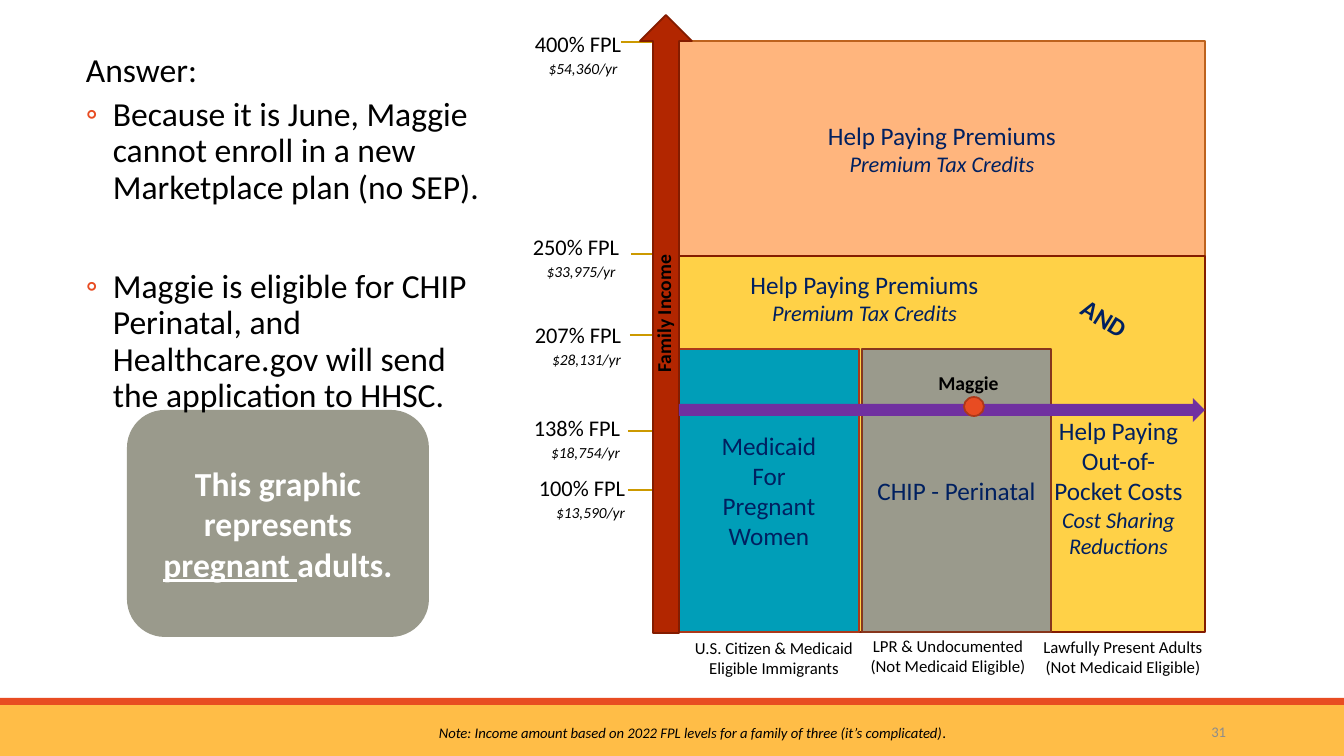
from lxml.etree import SubElement
from pptx import Presentation
from pptx.dml.color import RGBColor
from pptx.enum.shapes import MSO_CONNECTOR as Connector, MSO_SHAPE as Shape
from pptx.enum.text import MSO_ANCHOR as Anchor, PP_ALIGN as Align
from pptx.oxml.ns import qn
from pptx.util import Pt

EMU_PER_PX = 914400 / 100.8
FONT = "Calibri"
COLORS = {
    "black": "000000", "white": "FFFFFF", "navy": "002060", "muted": "8C8C8C",
    "amber": "FFBD47", "orange": "E84C22", "tick": "CC9900",
    "peach": "FFB57D", "peach_edge": "BD621D", "yellow": "FFD147",
    "brick": "B22600", "brick_edge": "841C00", "teal": "009EB8",
    "rust": "AC3819", "gray": "9A9A8C", "gray_edge": "87361C", "purple": "7030A0",
}

SMALL_ITALIC = {"size": 16, "italic": True}
PREMIUMS = ["Help Paying Premiums", [("Premium Tax Credits", SMALL_ITALIC)]]
COST_SHARING = ["Help Paying", "Out-of-Pocket Costs",
                [("Cost Sharing Reductions", SMALL_ITALIC)]]
GRAPHIC_NOTE = [[("This graphic represents ", {}),
                 ("pregnant ", {"underline": True}), ("adults.", {})]]
FOOTNOTE = [[("Note: Income amount based on 2022 FPL levels for a family of three "
              "(it’s complicated)", {}), (".", {"size": 11})]]
ANSWER = [
    ("Answer:", False, 4),
    ("Because it is June, Maggie cannot enroll in a new Marketplace plan (no SEP).", True, 43),
    ("Maggie is eligible for CHIP Perinatal, and Healthcare.gov will send "
     "the application to HHSC.", True, 4),
]
INCOME_LEVELS = [
    ("400% FPL", "$54,360/yr ", 31, 631, 621, 42),
    ("250% FPL", "$33,975/yr ", 234, 629, 631, 254),
    ("207% FPL", "$28,131/yr", 322, 631, 630, 335),
    ("138% FPL", "$18,754/yr", 415, 630, 628, 431),
    ("100% FPL", "$13,590/yr", 475, 635, 628, 490),
]
GROUPS = [
    (["U.S. Citizen & Medicaid Eligible Immigrants"], 675, 633, 198),
    (["LPR & Undocumented", "(Not Medicaid Eligible)"], 850, 631, 196),
    (["Lawfully Present Adults (Not Medicaid Eligible)"], 1025, 632, 196),
]

SLIDE_W, SLIDE_H = 1344, 756
CHART_LEFT, CHART_W = 679, 526
CHART_TOP, CHART_BOTTOM = 41, 632
REDUCTION_TOP, MEDICAID_TOP = 256, 349
LABEL_W, TICK_W = 140, 60


def px(length):
    return round(length * EMU_PER_PX)


def rgb(name):
    return RGBColor.from_string(COLORS[name])


def write(shape, paragraphs, size=18, color="navy", bold=False, italic=False,
          align=Align.CENTER, anchor=Anchor.TOP, spacing=None, wrap=True):
    frame = shape.text_frame
    frame.word_wrap = wrap
    frame.vertical_anchor = anchor
    for index, content in enumerate(paragraphs):
        paragraph = frame.paragraphs[0] if index == 0 else frame.add_paragraph()
        paragraph.alignment = align
        if spacing:
            paragraph.line_spacing = spacing
        for words, change in [(content, {})] if isinstance(content, str) else content:
            run = paragraph.add_run()
            run.text = words
            font = run.font
            font.name = FONT
            font.size = Pt(change.get("size", size))
            font.bold = bold
            font.italic = change.get("italic", italic)
            font.underline = change.get("underline", False)
            font.color.rgb = rgb(color)
    return frame


def add_block(slide, kind, box, fill, edge=None):
    block = slide.shapes.add_shape(kind, *map(px, box))
    block.shadow.inherit = False
    block.fill.solid()
    block.fill.fore_color.rgb = rgb(fill)
    if edge:
        block.line.color.rgb = rgb(edge)
        block.line.width = Pt(1.25)
    else:
        block.line.fill.background()
    return block


def add_label(slide, box, paragraphs, rotation=0, **style):
    label = slide.shapes.add_textbox(*map(px, box))
    label.rotation = rotation
    return write(label, paragraphs, **style)


def add_tick(slide, left, y):
    tick = slide.shapes.add_connector(
        Connector.STRAIGHT, px(left), px(y), px(left + TICK_W), px(y))
    tick.line.color.rgb = rgb("tick")
    tick.line.width = Pt(1.25)
    SubElement(tick._element.spPr, qn("a:effectLst"))


def add_bullet(paragraph):
    properties = paragraph._p.get_or_add_pPr()
    properties.set("marL", str(px(32)))
    properties.set("indent", str(px(-27)))
    color = SubElement(properties, qn("a:buClr"))
    SubElement(color, qn("a:srgbClr"), val=COLORS["orange"])
    SubElement(properties, qn("a:buFont"), typeface=FONT)
    SubElement(properties, qn("a:buChar"), char="◦")


def add_answer(slide):
    frame = add_label(slide, (71, 48, 419, 340), [line[0] for line in ANSWER],
                      size=24, color="black", align=Align.LEFT, spacing=0.9)
    for index, (paragraph, (_, bulleted, after)) in enumerate(zip(frame.paragraphs, ANSWER)):
        if index:
            paragraph.space_before = Pt(2)
        paragraph.space_after = Pt(after)
        if bulleted:
            add_bullet(paragraph)
        else:
            paragraph._p.get_or_add_pPr().set("marL", str(px(5)))


def add_income_chart(slide):
    for level, amount, top, right, tick_left, tick_y in INCOME_LEVELS:
        add_tick(slide, tick_left, tick_y)
        add_label(slide, (right - LABEL_W, top, LABEL_W, 53),
                  [level, [(amount, {"size": 11, "italic": True})]],
                  size=16, color="black", align=Align.RIGHT, spacing=Pt(15))

    premiums = add_block(slide, Shape.RECTANGLE,
                         (CHART_LEFT, CHART_TOP, CHART_W, REDUCTION_TOP - CHART_TOP),
                         "peach", "peach_edge")
    write(premiums, PREMIUMS, anchor=Anchor.MIDDLE)
    add_block(slide, Shape.RECTANGLE,
              (CHART_LEFT, REDUCTION_TOP, CHART_W, CHART_BOTTOM - REDUCTION_TOP),
              "yellow", "brick_edge")
    medicaid_h = CHART_BOTTOM - MEDICAID_TOP
    medicaid = add_block(slide, Shape.RECTANGLE,
                         (CHART_LEFT, MEDICAID_TOP, 180, medicaid_h), "teal", "rust")
    write(medicaid, ["Medicaid", "For", "Pregnant", "Women"], anchor=Anchor.MIDDLE)
    perinatal = add_block(slide, Shape.RECTANGLE,
                          (862, MEDICAID_TOP, 189, medicaid_h), "gray", "gray_edge")
    write(perinatal, ["CHIP - Perinatal"], anchor=Anchor.MIDDLE)

    add_label(slide, (697, 264, 335, 68), PREMIUMS)
    add_label(slide, (1070, 298, 69, 40), ["AND"], rotation=31.9, bold=True, wrap=False)
    add_label(slide, (1042, 410, 153, 156), COST_SHARING)

    add_block(slide, Shape.UP_ARROW, (640, 15, 52, 618), "brick", "brick_edge")
    add_label(slide, (589, 287, 153, 38), ["Family Income"], rotation=270,
              size=14, color="black", bold=True, align=Align.LEFT)
    for group, left, top, width in GROUPS:
        add_label(slide, (left, top, width, 50), group, size=12, color="black")

    add_block(slide, Shape.RIGHT_ARROW, (CHART_LEFT, 398, CHART_W, 24), "purple")
    add_block(slide, Shape.OVAL, (964, 397, 20, 19), "orange", "rust")
    add_label(slide, (927, 366, 83, 34), ["Maggie"], size=14, color="black", bold=True)


def main():
    deck = Presentation()
    deck.slide_width, deck.slide_height = px(SLIDE_W), px(SLIDE_H)
    slide = deck.slides.add_slide(deck.slide_layouts[6])

    add_block(slide, Shape.RECTANGLE, (0, 705, SLIDE_W, 51), "amber")
    add_block(slide, Shape.RECTANGLE, (0, 698, SLIDE_W, 7), "orange")
    add_label(slide, (1092, 712, 144, 40), ["31"], size=10.5, color="muted",
              align=Align.RIGHT, anchor=Anchor.MIDDLE)
    add_income_chart(slide)
    note = add_block(slide, Shape.ROUNDED_RECTANGLE, (127, 410, 302, 227), "gray")
    write(note, GRAPHIC_NOTE, size=24, color="white", bold=True, anchor=Anchor.MIDDLE)
    add_answer(slide)
    add_label(slide, (429, 718, 539, 29), FOOTNOTE, size=10.5, color="black",
              italic=True, align=Align.LEFT)
    deck.save("out.pptx")


if __name__ == "__main__":
    main()
